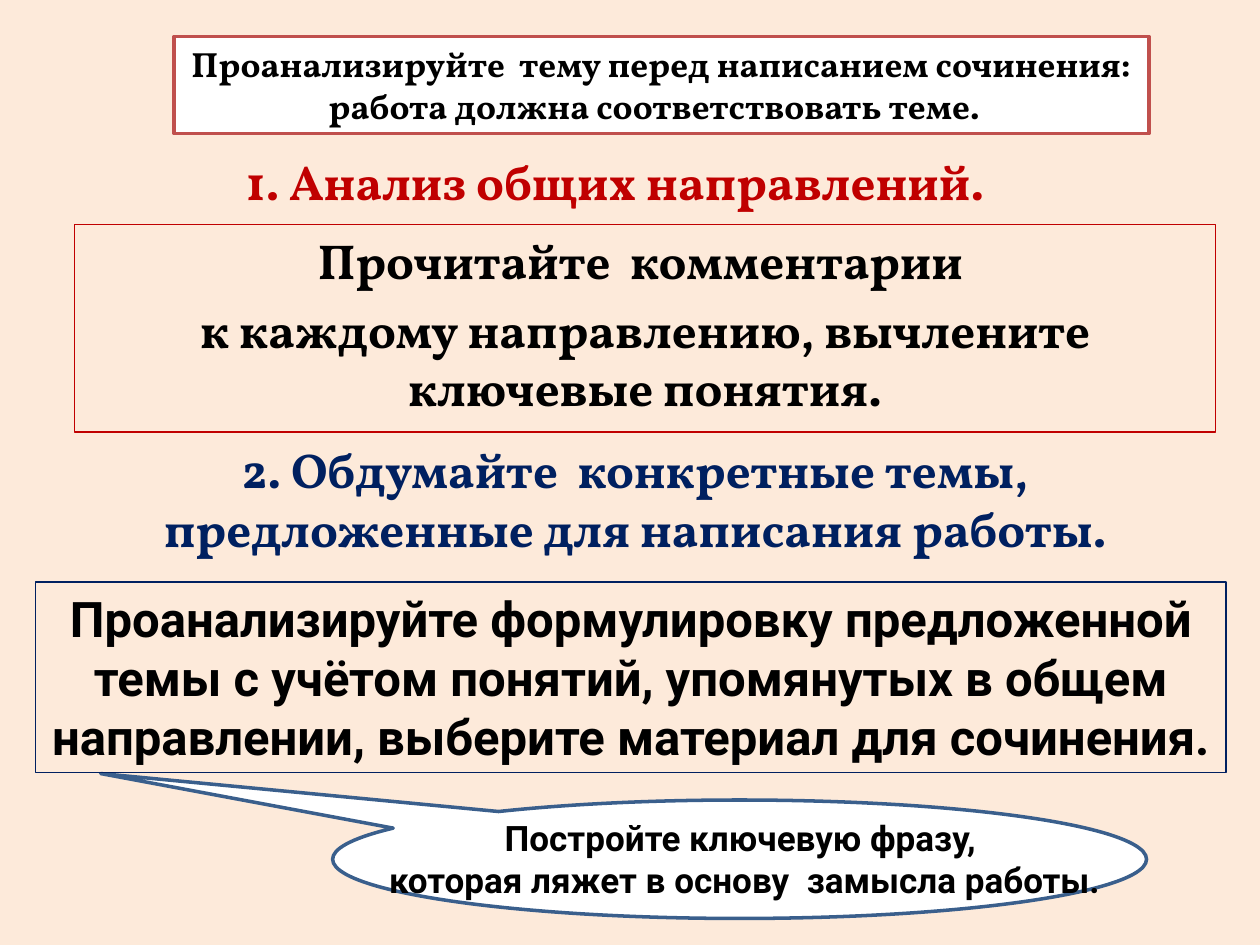
import pptx
import pptx.util
import pptx.dml.color
import pptx.enum.shapes
import pptx.enum.text

Inches, Pt = pptx.util.Inches, pptx.util.Pt
SHAPE = pptx.enum.shapes.MSO_SHAPE

THEME = {
    "background": "FDEADA", "white": "FFFFFF", "black": "000000",
    "red": "C00000", "navy": "002060", "brick": "C0504D", "steel": "3A5F8C",
    "serif": "Vollkorn", "sans": "Roboto",
    "large": 28, "small": 20, "thin": 0.75, "thick": 2,
}

CALLOUT = {"at": (2.64, 6.35, 6.46, 0.94), "tip": (-0.785, -0.724)}

BLOCKS = [
    {"at": (0.59, 1.78, 9.06, 1.65), "border": ("red", "thin"), "before": 5.6,
     "lines": ["Прочитайте  комментарии ",
               "к каждому направлению, вычлените ключевые понятия."]},
    {"at": (0.28, 4.62, 9.45, 1.51), "border": ("navy", "thin"), "font": "sans",
     "lines": ["Проанализируйте формулировку предложенной темы с учётом понятий, "
               "упомянутых в общем направлении, выберите материал для сочинения."]},
    {"at": (0.59, 1.15, 8.66, 0.57), "color": "red",
     "lines": ["1. Анализ общих направлений. "]},
    {"at": (0.83, 3.44, 8.5, 1.04), "color": "navy",
     "lines": ["2. Обдумайте  конкретные темы, ",
               "предложенные для написания работы. "]},
    {"at": (1.38, 0.29, 7.74, 0.77), "border": ("brick", "thick"), "fill": "white",
     "size": "small", "wrap": False,
     "lines": ["Проанализируйте  тему перед написанием сочинения:",
               "работа должна соответствовать теме.  "]},
    {"at": (2.64, 6.43, 6.54, 0.77), "font": "sans", "size": "small",
     "lines": ["Постройте ключевую фразу, ",
               "которая ляжет в основу  замысла работы."]},
]


def rgb(name):
    return pptx.dml.color.RGBColor.from_string(THEME[name])


def add_outlined(s, kind, at, border, fill=None):
    sp = s.shapes.add_shape(kind, *map(Inches, at))
    sp.shadow.inherit = False
    if fill:
        sp.fill.solid()
        sp.fill.fore_color.rgb = rgb(fill)
    else:
        sp.fill.background()
    color, width = border
    sp.line.color.rgb = rgb(color)
    sp.line.width = Pt(THEME[width])
    return sp


def add_block(s, block):
    if "border" in block:
        sp = add_outlined(s, SHAPE.RECTANGLE, block["at"], block["border"], block.get("fill"))
    else:
        sp = s.shapes.add_textbox(*map(Inches, block["at"]))
    tf = sp.text_frame
    tf.word_wrap = block.get("wrap", True)
    tf.vertical_anchor = pptx.enum.text.MSO_ANCHOR.TOP
    for i, line in enumerate(block["lines"]):
        p = tf.add_paragraph() if i else tf.paragraphs[0]
        p.alignment = pptx.enum.text.PP_ALIGN.CENTER
        p.space_before = Pt(block.get("before", 0))
        r = p.add_run()
        r.text = line
        r.font.name = THEME[block.get("font", "serif")]
        r.font.size = Pt(THEME[block.get("size", "large")])
        r.font.bold = True
        r.font.color.rgb = rgb(block.get("color", "black"))


def main():
    prs = pptx.Presentation()
    prs.slide_width, prs.slide_height = Inches(10), Inches(7.5)
    s = prs.slides.add_slide(prs.slide_layouts[6])
    s.background.fill.solid()
    s.background.fill.fore_color.rgb = rgb("background")

    sp = add_outlined(s, SHAPE.OVAL_CALLOUT, CALLOUT["at"], ("steel", "thick"), "white")
    for i, value in enumerate(CALLOUT["tip"]):
        sp.adjustments[i] = value
    for block in BLOCKS:
        add_block(s, block)
    prs.save("out.pptx")


if __name__ == "__main__":
    main()
